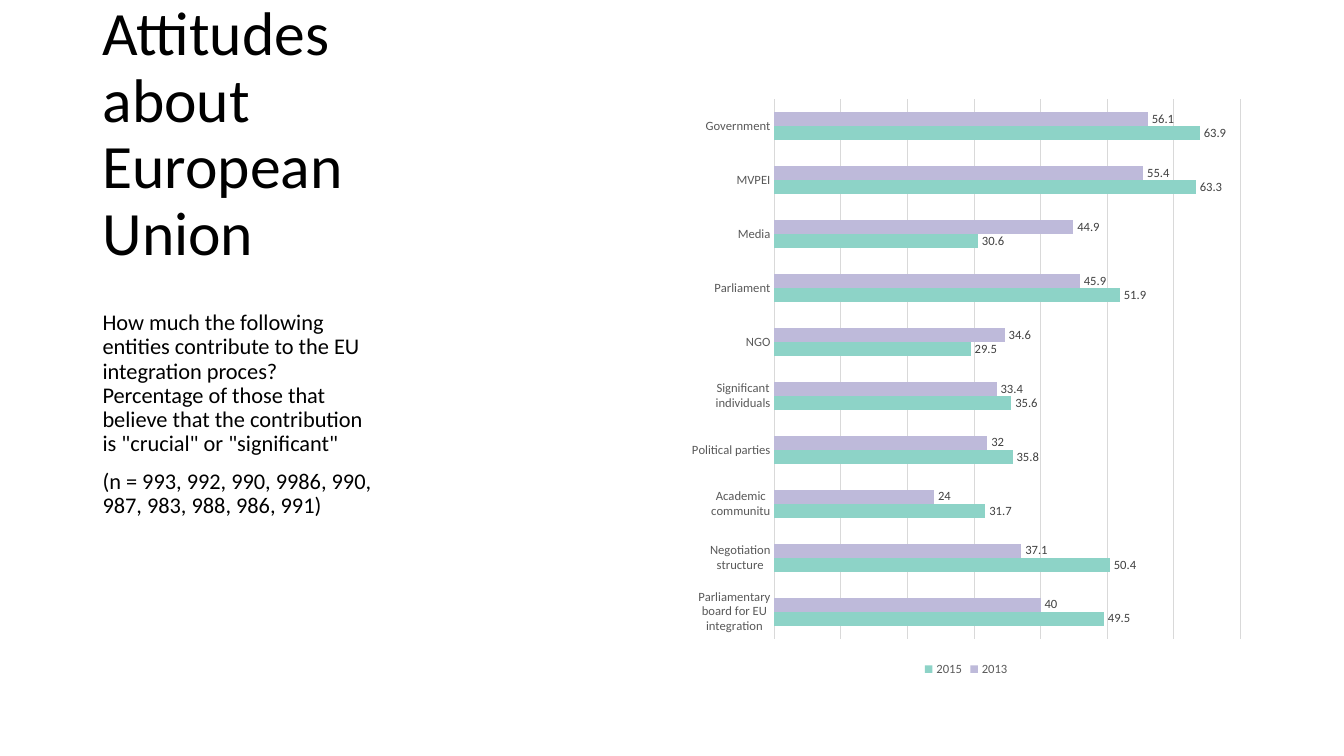
from dataclasses import dataclass

from lxml import etree
from pptx import Presentation, util as u
from pptx.chart.data import CategoryChartData
from pptx.dml.color import RGBColor
from pptx.enum import chart as ch, text
from pptx.oxml.ns import qn

FONT = "Calibri"
COLORS = {"text": "000000", "axis": "595959", "label": "404040",
          "grid": "D9D9D9", "lilac": "BEBADA", "mint": "8DD3C7"}


@dataclass
class Survey:
    year: str
    color: str
    values: tuple[float, ...]


ENTITIES = ("Government", "MVPEI", "Media", "Parliament", "NGO",
            "Significant individuals", "Political parties",
            "Academic communitu", "Negotiation structure",
            "Parliamentary board for EU integration")
SURVEYS = (
    Survey("2013", "lilac", (56.1, 55.4, 44.9, 45.9, 34.6, 33.4, 32, 24, 37.1, 40)),
    Survey("2015", "mint", (63.9, 63.3, 30.6, 51.9, 29.5, 35.6, 35.8, 31.7, 50.4, 49.5)),
)
QUESTION = (
    "How much the following entities contribute to the EU integration proces? "
    "Percentage of those that believe that the contribution is "
    '"crucial" or "significant"',
    "(n = 993, 992, 990, 9986, 990, 987, 983, 988, 986, 991)",
)


def rgb(name: str) -> RGBColor:
    return RGBColor.from_string(COLORS[name])


def set_font(font, size: float, color: str) -> None:
    font.name, font.size = FONT, u.Pt(size)
    font.color.rgb = rgb(color)


def fill_placeholder(sp, box: tuple[float, ...], paragraphs: tuple[str, ...], *,
                     size: float, anchor, space: float = 0) -> None:
    """Move a placeholder to box (cm) and write unbulleted left-aligned text."""
    sp.left, sp.top, sp.width, sp.height = map(u.Cm, box)
    tf = sp.text_frame
    tf.word_wrap = True
    tf.auto_size = text.MSO_AUTO_SIZE.NONE
    tf.vertical_anchor = anchor
    for i, line in enumerate(paragraphs):
        p = tf.paragraphs[0] if i == 0 else tf.add_paragraph()
        p.alignment = text.PP_ALIGN.LEFT
        p.line_spacing = 0.9
        p.space_before = u.Pt(space if i else 0)
        pPr = p._p.get_or_add_pPr()
        pPr.set("marL", "0")
        pPr.set("indent", "0")
        etree.SubElement(pPr, qn("a:buNone"))
        r = p.add_run()
        r.text = line
        set_font(r.font, size, "text")


def set_line(line) -> None:
    line.color.rgb = rgb("grid")
    line.width = u.Pt(0.75)


def add_survey_chart(s, box: tuple[float, ...]) -> None:
    data = CategoryChartData()
    data.categories = ENTITIES
    for survey in SURVEYS:
        data.add_series(survey.year, survey.values)
    chart = s.shapes.add_chart(ch.XL_CHART_TYPE.BAR_CLUSTERED,
                               *map(u.Cm, box), data).chart
    set_font(chart.font, 10, "text")
    chart.has_title = False
    chart.has_legend = True
    chart.legend.position = ch.XL_LEGEND_POSITION.BOTTOM
    chart.legend.include_in_layout = False
    set_font(chart.legend.font, 9, "axis")

    cat = chart.category_axis
    cat.reverse_order = True
    cat.major_tick_mark = cat.minor_tick_mark = ch.XL_TICK_MARK.NONE
    set_font(cat.tick_labels.font, 9, "axis")
    set_line(cat.format.line)

    val = chart.value_axis
    val.visible = False
    val.minimum_scale, val.maximum_scale, val.major_unit = 0, 70, 10
    val.has_major_gridlines = True
    set_line(val.major_gridlines.format.line)

    plot = chart.plots[0]
    plot.gap_width, plot.overlap = 182, 0
    plot.vary_by_categories = False
    for survey, series in zip(SURVEYS, plot.series):
        series.invert_if_negative = False
        series.format.fill.solid()
        series.format.fill.fore_color.rgb = rgb(survey.color)
        labels = series.data_labels
        labels.show_value = True
        labels.position = ch.XL_LABEL_POSITION.OUTSIDE_END
        set_font(labels.font, 9, "label")


def main() -> None:
    prs = Presentation()
    prs.slide_width, prs.slide_height = u.Cm(33.87), u.Cm(19.05)
    s = prs.slides.add_slide(prs.slide_layouts[1])
    fill_placeholder(s.shapes.title, (2.33, 1.57, 9.2, 3.68),
                     ("Attitudes about European Union",),
                     size=44, anchor=text.MSO_ANCHOR.MIDDLE)
    fill_placeholder(s.placeholders[1], (2.33, 7.72, 7.37, 9.45), QUESTION,
                     size=16, anchor=text.MSO_ANCHOR.TOP, space=10)
    add_survey_chart(s, (17.15, 2.2, 14.4, 14.95))
    prs.save("out.pptx")


if __name__ == "__main__":
    main()
